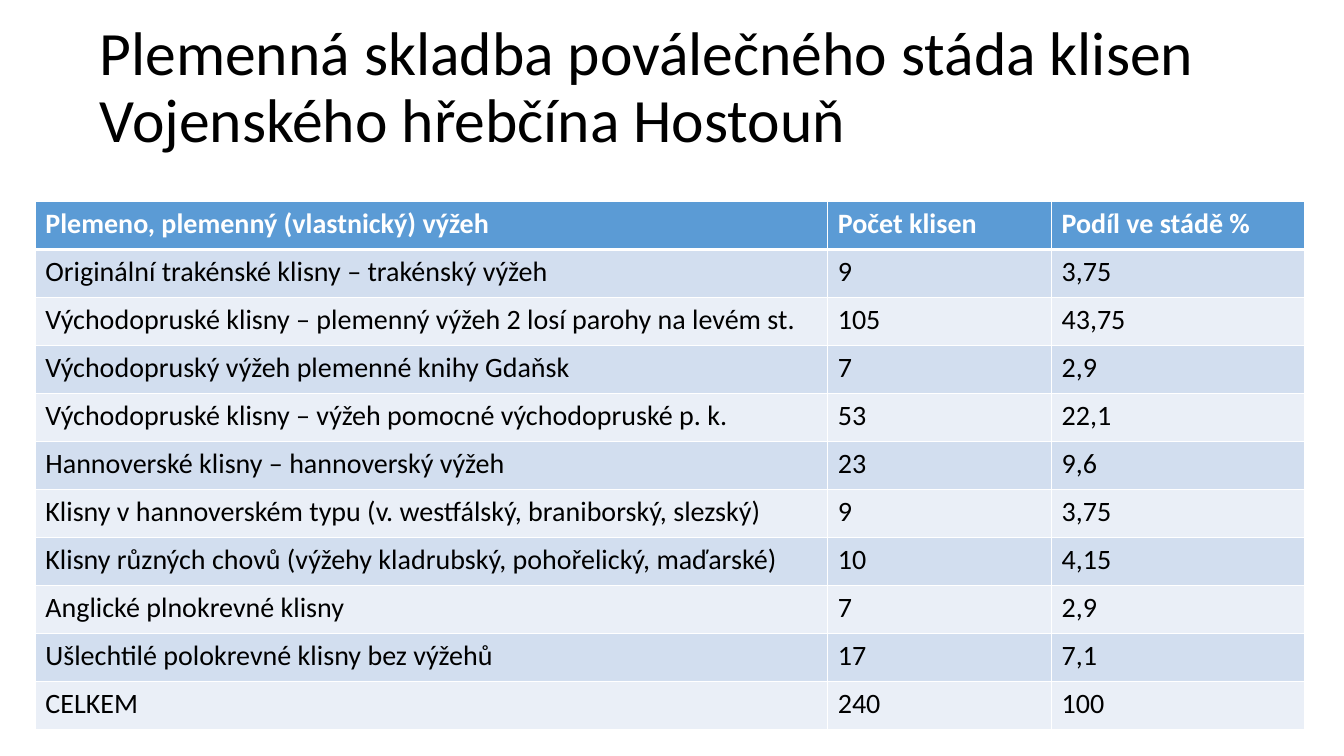
from lxml.etree import SubElement
from pptx import Presentation
from pptx.dml.color import RGBColor
from pptx.enum.text import MSO_ANCHOR
from pptx.oxml.ns import qn
from pptx.util import Inches, Pt

TITLE = "Plemenná skladba poválečného stáda klisen Vojenského hřebčína Hostouň"
HEADER = ("Plemeno, plemenný (vlastnický) výžeh", "Počet klisen", "Podíl ve stádě %")
BREEDS = [
    ("Originální trakénské klisny – trakénský výžeh", "9", "3,75"),
    ("Východopruské klisny – plemenný výžeh 2 losí parohy na levém st.", "105", "43,75"),
    ("Východopruský výžeh plemenné knihy Gdaňsk", "7", "2,9"),
    ("Východopruské klisny – výžeh pomocné východopruské p. k.", "53", "22,1"),
    ("Hannoverské klisny – hannoverský výžeh", "23", "9,6"),
    ("Klisny v hannoverském typu (v. westfálský, braniborský, slezský)", "9", "3,75"),
    ("Klisny různých chovů (výžehy kladrubský, pohořelický, maďarské)", "10", "4,15"),
    ("Anglické plnokrevné klisny", "7", "2,9"),
    ("Ušlechtilé polokrevné klisny bez výžehů", "17", "7,1"),
    ("CELKEM", "240", "100"),
]
COLUMN_WIDTHS = (7.86, 2.22, 2.51)
TABLE_HEIGHT = 5.24
BLACK, WHITE = "000000", "FFFFFF"
HEADER_FILL = "5B9BD5"
BAND_FILLS = ("D2DEEF", "EAEFF7")


def color(hex_value):
    return RGBColor.from_string(hex_value)


def format_text(paragraph, size, hex_value, bold=False):
    for run in paragraph.runs:
        run.font.name = "Calibri"
        run.font.size = Pt(size)
        run.font.bold = bold
        run.font.color.rgb = color(hex_value)


def add_borders(cell, widths):
    properties = cell._tc.get_or_add_tcPr()
    for side, width in widths.items():
        line = SubElement(properties, qn(f"a:ln{side}"), w=str(Pt(width)))
        fill = SubElement(line, qn("a:solidFill"))
        SubElement(fill, qn("a:srgbClr"), val=WHITE)


def add_title(slide):
    title = slide.shapes.add_textbox(Inches(0.89), Inches(0.16), Inches(11.5), Inches(1.45))
    frame = title.text_frame
    frame.word_wrap = True
    frame.vertical_anchor = MSO_ANCHOR.MIDDLE
    frame.text = TITLE
    frame.paragraphs[0].line_spacing = 0.9
    format_text(frame.paragraphs[0], 44, BLACK)


def add_breed_table(slide):
    rows = [HEADER, *BREEDS]
    table = slide.shapes.add_table(
        len(rows), len(HEADER), Inches(0.35), Inches(2),
        Inches(sum(COLUMN_WIDTHS)), Inches(TABLE_HEIGHT),
    ).table
    for column, width in zip(table.columns, COLUMN_WIDTHS):
        column.width = Inches(width)
    for r, values in enumerate(rows):
        is_header = r == 0
        row_fill = HEADER_FILL if is_header else BAND_FILLS[(r - 1) % 2]
        borders = {"L": 1, "R": 1, "T": 3 if r == 1 else 1, "B": 3 if is_header else 1}
        for c, value in enumerate(values):
            cell = table.cell(r, c)
            cell.text_frame.text = value
            format_text(cell.text_frame.paragraphs[0], 20, WHITE if is_header else BLACK, is_header)
            add_borders(cell, borders)
            cell.fill.solid()
            cell.fill.fore_color.rgb = color(row_fill)


def main():
    deck = Presentation()
    deck.slide_width, deck.slide_height = Inches(13.33), Inches(7.5)
    slide = deck.slides.add_slide(deck.slide_layouts[6])
    add_title(slide)
    add_breed_table(slide)
    deck.save("out.pptx")


if __name__ == "__main__":
    main()
